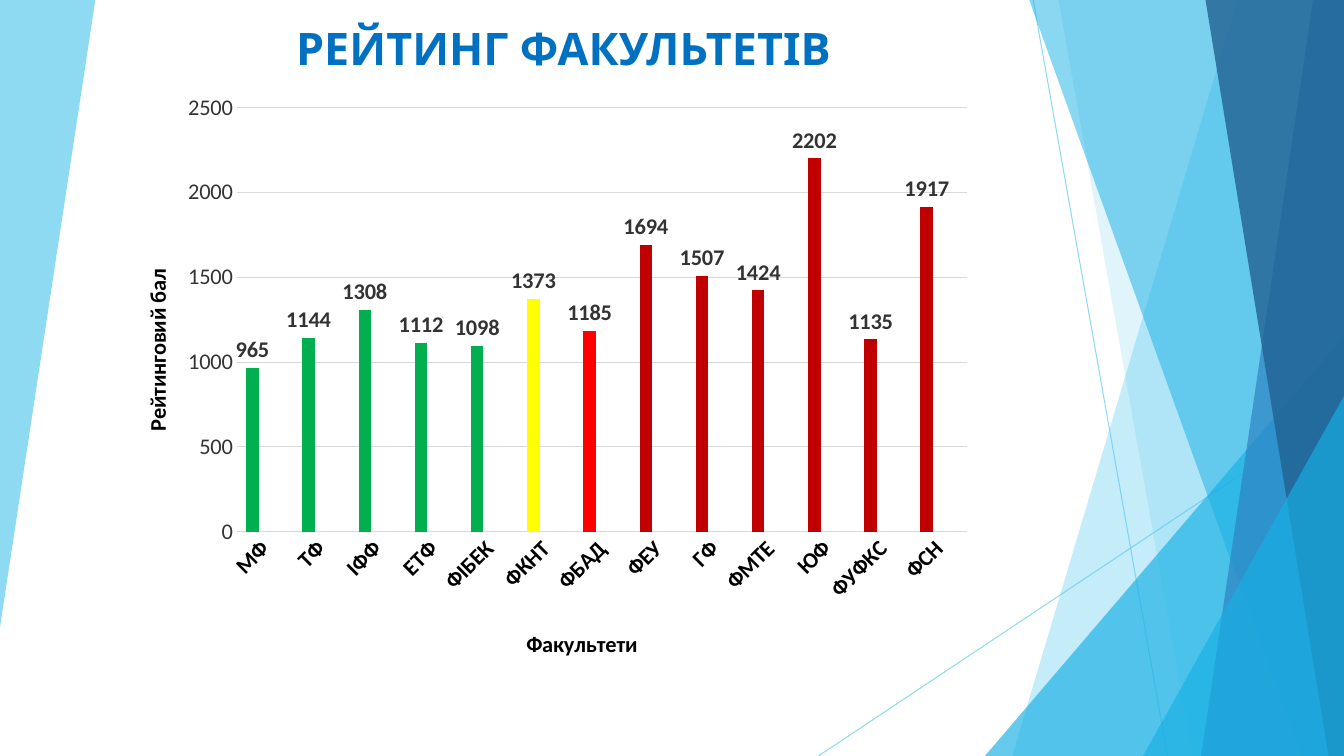
from dataclasses import dataclass

from lxml import etree
from pptx import Presentation
from pptx import util as u
from pptx.chart.data import CategoryChartData
from pptx.dml.color import RGBColor
from pptx.enum import chart as charts, shapes, text
from pptx.oxml import ns, parse_xml

WIDTH, HEIGHT, TOP = 960, 540, -0.6
SKY = RGBColor(0x5F, 0xCB, 0xEF)
CYAN = RGBColor(0x17, 0xB0, 0xE4)
BLUE = RGBColor(0x2E, 0x83, 0xC3)
NAVY = RGBColor(0x22, 0x62, 0x92)
TITLE_BLUE = RGBColor(0x00, 0x70, 0xC0)
BLACK = RGBColor(0, 0, 0)
DARK = RGBColor(0x33, 0x33, 0x33)
GRID = RGBColor(0xD9, 0xD9, 0xD9)
GREEN = RGBColor(0x00, 0xB0, 0x50)
YELLOW = RGBColor(0xFF, 0xFF, 0x00)
RED = RGBColor(0xFF, 0, 0)
CRIMSON = RGBColor(0xC0, 0, 0)
ORANGE = RGBColor(0xED, 0x7D, 0x31)
GREY = RGBColor(0xA5, 0xA5, 0xA5)

SCORES = {"МФ": 965, "ТФ": 1144, "ІФФ": 1308, "ЕТФ": 1112, "ФІБЕК": 1098,
          "ФКНТ": 1373, "ФБАД": 1185, "ФЕУ": 1694, "ГФ": 1507, "ФМТЕ": 1424,
          "ЮФ": 2202, "ФУФКС": 1135, "ФСН": 1917}
POINT_COLORS = [GREEN] * 5 + [YELLOW, RED]
SERIES_COLORS = [CRIMSON, ORANGE, GREY]
AXIS_TEXT = {"name": "Calibri", "size": u.Pt(16)}


@dataclass
class Facet:
    points: list[tuple[float, float]]
    color: RGBColor
    opacity: int


@dataclass
class Corner:
    """Right triangle that fills the lower right corner of the slide."""
    left: float
    top: float
    color: RGBColor
    opacity: int


@dataclass
class Ray:
    start: tuple[float, float]
    end: tuple[float, float]


def band(top_left: float, bottom_left: float, color: RGBColor, opacity: int) -> Facet:
    """Facet that reaches from a slanted left side to the slide's right edge."""
    return Facet([(top_left, TOP), (WIDTH, TOP), (WIDTH, HEIGHT), (bottom_left, HEIGHT)],
                 color, opacity)


DECORATION = [
    Facet([(0, TOP), (68, TOP), (68, 0.6), (0, 448)], SKY, 70),
    Ray((738, 0), (834, HEIGHT)),
    Ray((WIDTH, 290), (584.6, HEIGHT)),
    band(884, 723, SKY, 36),
    band(756, 852, SKY, 20),
    Corner(703.5, 240, CYAN, 66),
    band(735, 929.5, CYAN, 50),
    band(938, 858, BLUE, 70),
    band(861, 949, NAVY, 80),
    Corner(816.5, 283, CYAN, 66),
]


def set_format(target, values: dict) -> None:
    for name, value in values.items():
        setattr(target, name, value)


def set_font(font, values: dict, color: RGBColor) -> None:
    set_format(font, values)
    font.color.rgb = color


def paint(fill, color: RGBColor, opacity: int = 100) -> None:
    fill.solid()
    fill.fore_color.rgb = color
    if opacity < 100:
        tint = fill._xPr.find(".//" + ns.qn("a:srgbClr"))
        etree.SubElement(tint, ns.qn("a:alpha")).set("val", str(opacity * 1000))


def draw_decoration(page, item: Facet | Corner | Ray) -> None:
    if isinstance(item, Ray):
        ray = page.shapes.add_connector(
            shapes.MSO_CONNECTOR.STRAIGHT, *(u.Pt(v) for v in item.start + item.end))
        ray.line.width = u.Pt(0.75)
        paint(ray.line.fill, SKY, 70)
        etree.SubElement(ray._element.spPr, ns.qn("a:effectLst"))
        return
    if isinstance(item, Corner):
        shape = page.shapes.add_shape(
            shapes.MSO_SHAPE.ISOSCELES_TRIANGLE, u.Pt(item.left), u.Pt(item.top),
            u.Pt(WIDTH - item.left), u.Pt(HEIGHT - item.top))
        shape.adjustments[0] = 1
    else:
        corners = [(u.Pt(x), u.Pt(y)) for x, y in item.points]
        builder = page.shapes.build_freeform(*corners[0])
        builder.add_line_segments(corners[1:], close=True)
        shape = builder.convert_to_shape()
    shape.shadow.inherit = False
    shape.line.fill.background()
    paint(shape.fill, item.color, item.opacity)


def add_title(page) -> None:
    box = page.shapes.add_textbox(u.Pt(36), u.Pt(13.7), u.Pt(733), u.Pt(43.2))
    set_format(box.text_frame, {"word_wrap": True,
                                "vertical_anchor": text.MSO_ANCHOR.BOTTOM})
    para = box.text_frame.paragraphs[0]
    para.alignment = text.PP_ALIGN.CENTER
    span = para.add_run()
    span.text = "РЕЙТИНГ ФАКУЛЬТЕТІВ"
    set_font(span.font, {"name": "Karla", "size": u.Pt(32), "bold": True}, TITLE_BLUE)


def layout_xml(values: dict, inner: bool = False):
    """Manual chart layout; values are fractions of the chart's size."""
    target = '<c:layoutTarget val="inner"/>' if inner else ""
    modes = '<c:xMode val="edge"/><c:yMode val="edge"/>'
    sizes = "".join(f'<c:{name} val="{value}"/>' for name, value in values.items())
    return parse_xml(f'<c:layout {ns.nsdecls("c")}><c:manualLayout>{target}{modes}{sizes}'
                     '</c:manualLayout></c:layout>')


def style_axis(axis, title: str, color: RGBColor, bold: bool, place: dict) -> None:
    axis.major_tick_mark = axis.minor_tick_mark = charts.XL_TICK_MARK.NONE
    axis.format.line.fill.background()
    set_font(axis.tick_labels.font, AXIS_TEXT | {"bold": bold}, color)
    para = axis.axis_title.text_frame.paragraphs[0]
    span = para.add_run()
    span.text = title
    set_font(span.font, AXIS_TEXT | {"bold": True}, BLACK)
    element = axis.axis_title._element
    for old in element.findall(ns.qn("c:layout")):
        element.remove(old)
    element.find(ns.qn("c:tx")).addnext(layout_xml(place))


def add_rating_chart(page) -> None:
    data = CategoryChartData()
    data.categories = list(SCORES)
    data.add_series("Series 1", list(SCORES.values()))
    for number in (2, 3):
        data.add_series(f"Series {number}", [None] * len(SCORES))
    chart = page.shapes.add_chart(
        charts.XL_CHART_TYPE.COLUMN_CLUSTERED,
        u.Pt(80), u.Pt(59), u.Pt(623.5), u.Pt(421), data).chart
    set_format(chart, {"has_legend": False, "has_title": False})
    set_font(chart.font, {"name": "Calibri", "size": u.Pt(9.9)}, BLACK)

    plot = chart.plots[0]
    set_format(plot, {"gap_width": 150, "overlap": 0, "vary_by_categories": False})
    for series, color in zip(plot.series, SERIES_COLORS):
        paint(series.format.fill, color)
        labels = series.data_labels
        set_format(labels, {"show_value": True,
                            "position": charts.XL_LABEL_POSITION.OUTSIDE_END})
        set_font(labels.font, AXIS_TEXT | {"bold": True}, DARK)
    for index, color in enumerate(POINT_COLORS):
        paint(plot.series[0].points[index].format.fill, color)

    faculties, points = chart.category_axis, chart.value_axis
    style_axis(faculties, "Факультети", BLACK, True, {"x": 0.47, "y": 0.92})
    style_axis(points, "Рейтинговий бал", DARK, False, {"x": 0.03, "y": 0.31})
    faculties._element.txPr.bodyPr.set("rot", "-2700000")
    points.axis_title.text_frame._txBody.bodyPr.set("rot", "-5400000")
    set_format(points, {"minimum_scale": 0, "maximum_scale": 2500, "major_unit": 500})
    grid = points.major_gridlines.format.line
    grid.width = u.Pt(0.75)
    paint(grid.fill, GRID)

    area = plot._element.getparent()
    for old in area.findall(ns.qn("c:layout")):
        area.remove(old)
    area.insert(0, layout_xml({"x": 0.143, "y": 0.043, "w": 0.837, "h": 0.719}, inner=True))


def main() -> None:
    deck = Presentation()
    set_format(deck, {"slide_width": u.Pt(WIDTH), "slide_height": u.Pt(HEIGHT)})
    page = deck.slides.add_slide(deck.slide_layouts[6])
    for item in DECORATION:
        draw_decoration(page, item)
    add_title(page)
    add_rating_chart(page)
    deck.save("out.pptx")


if __name__ == "__main__":
    main()
